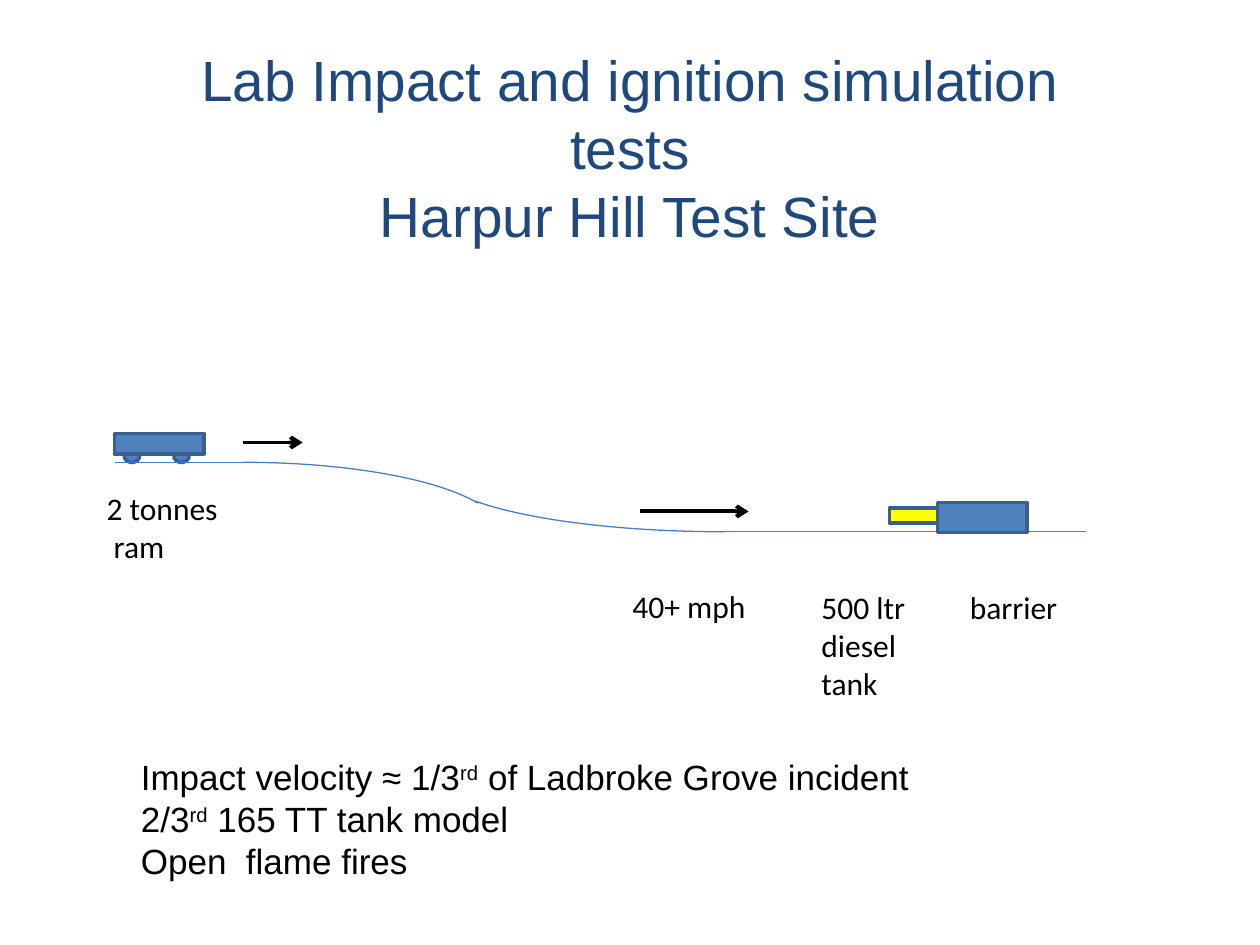
from lxml.etree import SubElement
from pptx import Presentation
from pptx.dml.color import RGBColor
from pptx.enum.shapes import MSO_CONNECTOR, MSO_SHAPE
from pptx.enum.text import MSO_ANCHOR, MSO_AUTO_SIZE, PP_ALIGN
from pptx.oxml.ns import qn
from pptx.util import Cm, Pt

COLORS = {
    "title": "1F497D",
    "text": "000000",
    "track": "4B7EBC",
    "steel": "4F81BD",
    "outline": "3A5F8C",
    "diesel": "FFFF00",
}


class SlideBuilder:
    def __init__(self, slide):
        self.slide = slide

    def color(self, name):
        return RGBColor.from_string(COLORS[name])

    def style(self, span, font, size, color):
        span.font.name = font
        span.font.size = Pt(size)
        span.font.color.rgb = self.color(color)

    def title(self, text, left, top, width, height):
        title = self.slide.shapes.title
        title.left, title.top = Cm(left), Cm(top)
        title.width, title.height = Cm(width), Cm(height)
        frame = title.text_frame
        frame.text = text
        frame.auto_size = MSO_AUTO_SIZE.NONE
        frame.vertical_anchor = MSO_ANCHOR.MIDDLE
        frame.margin_bottom = Cm(1.5)
        for para in frame.paragraphs:
            para.alignment = PP_ALIGN.CENTER
            for span in para.runs:
                self.style(span, "Arial", 32.4, "title")

    def text(self, lines, left, top, width, height, font="Calibri", size=18):
        """Add one paragraph per line; text between ^ marks is superscript."""
        box = self.slide.shapes.add_textbox(Cm(left), Cm(top), Cm(width), Cm(height))
        frame = box.text_frame
        frame.word_wrap = True
        for index, line in enumerate(lines):
            para = frame.paragraphs[0] if index == 0 else frame.add_paragraph()
            if "^" not in line:
                para.text = line
            else:
                for position, part in enumerate(line.split("^")):
                    span = para.add_run()
                    span.text = part
                    if position % 2:
                        span.font._element.set("baseline", "30000")
            for span in para.runs:
                self.style(span, font, size, "text")

    def shape(self, kind, left, top, width, height, fill="steel",
              line="outline", weight=2):
        shape = self.slide.shapes.add_shape(
            kind, Cm(left), Cm(top), Cm(width), Cm(height))
        shape.shadow.inherit = False
        if fill:
            shape.fill.solid()
            shape.fill.fore_color.rgb = self.color(fill)
        else:
            shape.fill.background()
        shape.line.color.rgb = self.color(line)
        shape.line.width = Pt(weight)
        return shape

    def arc(self, left, top, width, height, end, rotation=0):
        arc = self.shape(MSO_SHAPE.ARC, left, top, width, height,
                         fill=None, line="track", weight=0.75)
        arc.adjustments[0] = 162
        arc.adjustments[1] = end
        arc.rotation = rotation

    def level_line(self, start, end, y, color="track", weight=0.75):
        line = self.slide.shapes.add_connector(
            MSO_CONNECTOR.STRAIGHT, Cm(start), Cm(y), Cm(end), Cm(y))
        line.line.color.rgb = self.color(color)
        line.line.width = Pt(weight)
        SubElement(line._element.spPr, qn("a:effectLst"))
        return line

    def arrow(self, start, end, y):
        line = self.level_line(start, end, y, "text", 2.25)
        SubElement(line.line._get_or_add_ln(), qn("a:tailEnd"), type="arrow")


def main():
    deck = Presentation()
    deck.slide_width, deck.slide_height = Cm(25.4), Cm(19.05)
    page = SlideBuilder(deck.slides.add_slide(deck.slide_layouts[5]))

    page.title("Lab Impact and ignition simulation\vtests\vHarpur Hill Test Site",
               1.27, 0.76, 22.86, 5.77)

    # Track: upper level, two curves down the slope, lower level
    page.arc(-0.3, 9.32, 10.39, 2.79, 211.87)
    page.arc(8.71, 8.13, 11.81, 2.59, 211.41, rotation=180)
    page.level_line(14.3, 21.89, 10.72)

    # Ram on its wheels
    for left in (2.51, 3.51):
        page.shape(MSO_SHAPE.DODECAGON, left, 9.07, 0.3, 0.25)
    page.level_line(2.31, 5.08, 9.32)
    page.shape(MSO_SHAPE.RECTANGLE, 2.31, 8.74, 1.8, 0.41)

    # Diesel tank and barrier
    page.shape(MSO_SHAPE.RECTANGLE, 17.93, 10.24, 0.97, 0.3, fill="diesel")
    page.shape(MSO_SHAPE.RECTANGLE, 18.9, 10.13, 1.8, 0.61)

    # Direction of travel
    page.arrow(4.9, 6.1, 8.92)
    page.arrow(12.9, 15.09, 10.31)

    # Labels
    page.text(["2 tonnes\v ram"], 1.9, 9.73, 3.07, 1.8)
    page.text(["40+ mph"], 12.5, 11.71, 3, 1.02)
    page.text(["500 ltr diesel tank"], 16.31, 11.73, 2.59, 2.57)
    page.text(["barrier"], 19.3, 11.73, 2.59, 1.02)

    # Test conditions
    page.text(["Impact velocity ≈ 1/3^rd^ of Ladbroke Grove incident",
               "2/3^rd^ 165 TT tank model",
               "Open  flame fires"],
              2.59, 15.11, 16.71, 2.82, font="Arial", size=20)

    deck.save("out.pptx")


if __name__ == "__main__":
    main()
